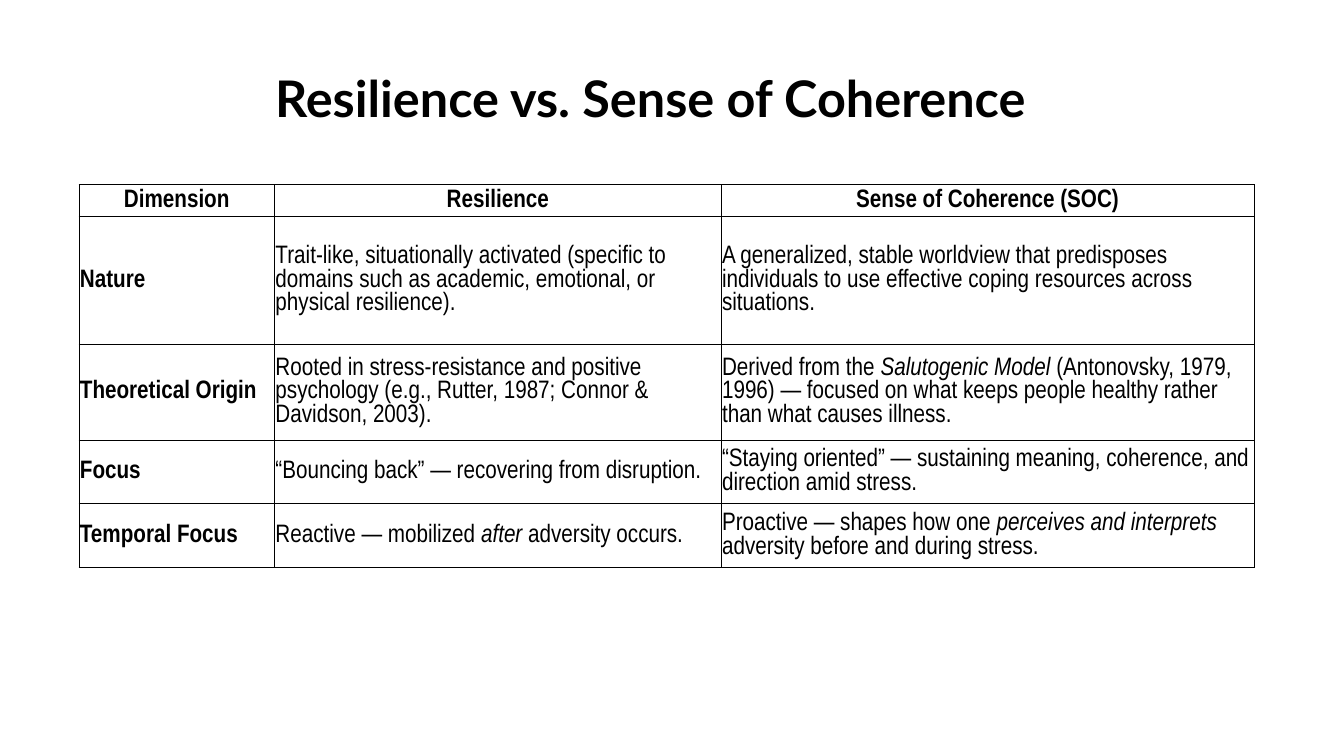
from dataclasses import dataclass

from lxml import etree
from pptx import Presentation
from pptx.dml.color import RGBColor
from pptx.enum.text import MSO_ANCHOR, MSO_AUTO_SIZE, PP_ALIGN
from pptx.oxml.ns import qn
from pptx.util import Pt

MIDDLE = MSO_ANCHOR.MIDDLE
LEFT, CENTER = PP_ALIGN.LEFT, PP_ALIGN.CENTER
GROW = MSO_AUTO_SIZE.SHAPE_TO_FIT_TEXT

BLACK = "000000"
TITLE_FORMAT = {"name": "Lato", "size": Pt(36), "bold": True}
LABEL_FORMAT = {"name": "Arial Narrow", "size": Pt(18), "bold": True}
BODY_FORMAT = {**LABEL_FORMAT, "bold": False}
CELL_FORMAT = {
    "vertical_anchor": MIDDLE,
    "margin_left": Pt(0.7),
    "margin_right": Pt(0.7),
    "margin_top": Pt(0.7),
    "margin_bottom": Pt(0),
}
BORDER_SIDES = ("lnL", "lnR", "lnT", "lnB")
BORDER_WIDTH = Pt(0.5)
COLUMN_WIDTHS = (139.7, 319, 380.8)
ROW_UNIT = 22.8


@dataclass(frozen=True)
class ComparisonRow:
    """One table row; asterisks enclose italic words."""

    dimension: str
    resilience: str
    coherence: str
    units: int


HEADER = ComparisonRow("Dimension", "Resilience", "Sense of Coherence (SOC)", 1)
ROWS = (
    HEADER,
    ComparisonRow(
        "Nature",
        "Trait-like, situationally activated (specific to domains such as "
        "academic, emotional, or physical resilience).",
        "A generalized, stable worldview that predisposes individuals to use "
        "effective coping resources across situations.",
        4,
    ),
    ComparisonRow(
        "Theoretical Origin",
        "Rooted in stress-resistance and positive psychology (e.g., Rutter, "
        "1987; Connor & Davidson, 2003).",
        "Derived from the *Salutogenic Model* (Antonovsky, 1979, 1996) — "
        "focused on what keeps people healthy rather than what causes illness.",
        3,
    ),
    ComparisonRow(
        "Focus",
        "“Bouncing back” — recovering from disruption.",
        "“Staying oriented” — sustaining meaning, coherence, and direction "
        "amid stress.",
        2,
    ),
    ComparisonRow(
        "Temporal Focus",
        "Reactive — mobilized *after* adversity occurs.",
        "Proactive — shapes how one *perceives and interprets* adversity "
        "before and during stress.",
        2,
    ),
)


def color(value: str) -> RGBColor:
    return RGBColor.from_string(value)


def apply_format(target, values: dict) -> None:
    for attribute, value in values.items():
        setattr(target, attribute, value)


def write_text(paragraph, text: str, font_format: dict, alignment=LEFT) -> None:
    paragraph.alignment = alignment
    for index, part in enumerate(text.split("*")):
        run = paragraph.add_run()
        run.text = part
        apply_format(run.font, {**font_format, "italic": index % 2 == 1})
        run.font.color.rgb = color(BLACK)


def add_borders(cell) -> None:
    properties = cell._tc.get_or_add_tcPr()
    for side in BORDER_SIDES:
        line = etree.SubElement(properties, qn(f"a:{side}"), w=str(BORDER_WIDTH))
        fill = etree.SubElement(line, qn("a:solidFill"))
        etree.SubElement(fill, qn("a:srgbClr"), val=BLACK)


def add_title(slide, text: str) -> None:
    box = slide.shapes.add_textbox(Pt(189.4), Pt(44.6), Pt(671), Pt(51))
    frame = box.text_frame
    apply_format(frame, {"word_wrap": True, "auto_size": GROW})
    write_text(frame.paragraphs[0], text, TITLE_FORMAT)


def add_comparison_table(slide, rows: tuple[ComparisonRow, ...]) -> None:
    height = ROW_UNIT * sum(row.units for row in rows)
    table = slide.shapes.add_table(
        len(rows), len(COLUMN_WIDTHS),
        Pt(56.4), Pt(131.8), Pt(sum(COLUMN_WIDTHS)), Pt(height),
    ).table
    apply_format(table, {"first_row": False, "horz_banding": False})
    for column, width in zip(table.columns, COLUMN_WIDTHS):
        column.width = Pt(width)
    for row_index, row in enumerate(rows):
        table.rows[row_index].height = Pt(ROW_UNIT * row.units)
        texts = (row.dimension, row.resilience, row.coherence)
        for column_index, text in enumerate(texts):
            cell = table.cell(row_index, column_index)
            apply_format(cell, CELL_FORMAT)
            add_borders(cell)
            cell.fill.background()
            is_label = row is HEADER or column_index == 0
            write_text(
                cell.text_frame.paragraphs[0],
                text,
                LABEL_FORMAT if is_label else BODY_FORMAT,
                CENTER if row is HEADER else LEFT,
            )


def main() -> None:
    presentation = Presentation()
    presentation.slide_width, presentation.slide_height = Pt(960), Pt(540)
    slide = presentation.slides.add_slide(presentation.slide_layouts[6])
    add_comparison_table(slide, ROWS)
    add_title(slide, "Resilience vs. Sense of Coherence")
    presentation.save("out.pptx")


if __name__ == "__main__":
    main()
